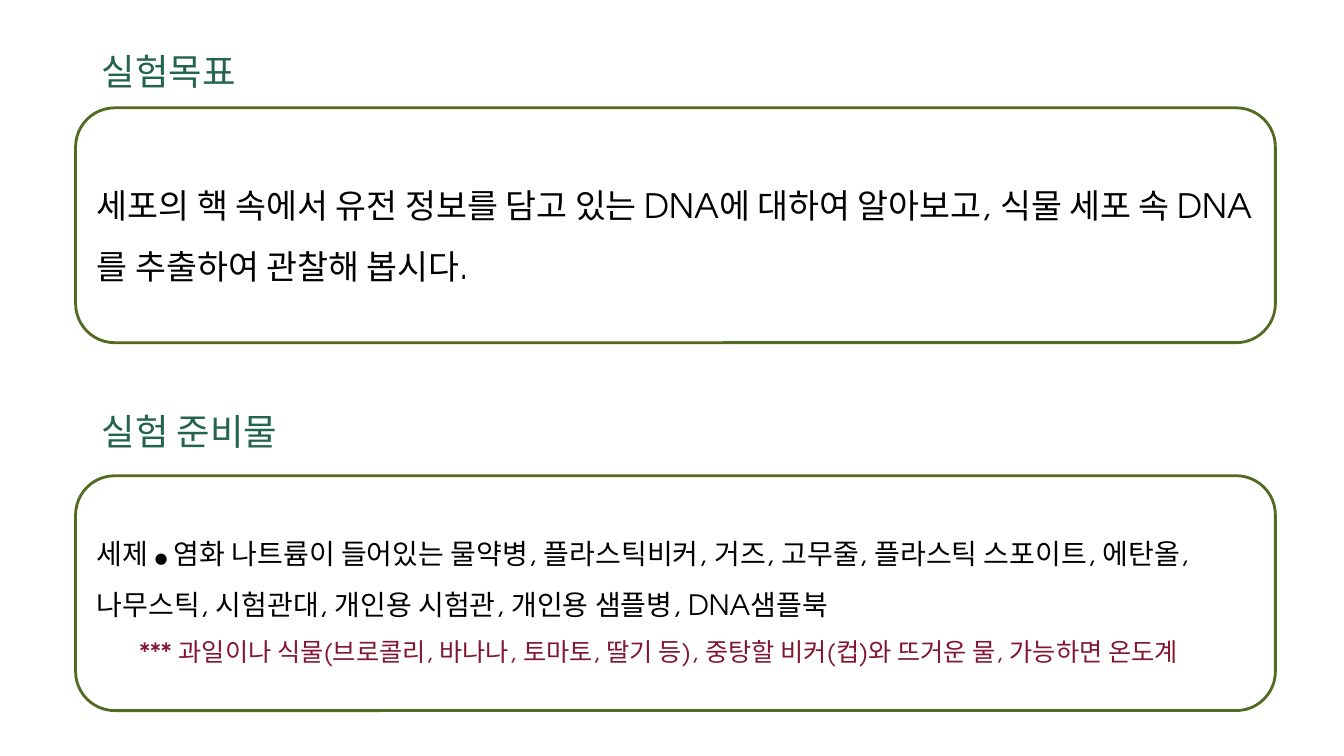
from lxml import etree
from pptx import Presentation, util as u
from pptx.enum import shapes, text

COLORS = {"heading": "22644D", "border": "536A21", "box": "FFFFFF",
          "body": "000000", "note": "811731", "shadow": "808080"}
FONT = "TeX Gyre Adventor"
DRAWING = "http://schemas.openxmlformats.org/drawingml/2006/main"
BOX_LEFT, BOX_WIDTH, BOX_HEIGHT = 0.75, 11.9, 2.33
HEADING_LEFT, HEADING_HEIGHT = 0.91, 0.48


def rgb(name):
    return RGBColor.from_string(COLORS[name])


def add_text(paragraph, words, size, color="body", spacing=1.0, indent=0, shadow=False):
    """Append a formatted run and set its paragraph's spacing and first-line indent."""
    paragraph.alignment = text.PP_ALIGN.LEFT
    paragraph.line_spacing = spacing
    if indent:
        paragraph._p.get_or_add_pPr().set("indent", str(u.Inches(indent)))
    run = paragraph.add_run()
    run.text = words
    run.font.size = u.Pt(size)
    run.font.name = FONT
    run.font.color.rgb = rgb(color)
    if shadow:
        effects = etree.fromstring(
            f'<a:effectLst xmlns:a="{DRAWING}">'
            '<a:outerShdw blurRad="38100" dist="38100" dir="2700000" algn="tl">'
            f'<a:srgbClr val="{COLORS["shadow"]}"><a:alpha val="50000"/></a:srgbClr>'
            '</a:outerShdw></a:effectLst>')
        run._r.rPr.find(f"{{{DRAWING}}}solidFill").addnext(effects)


from pptx.dml.color import RGBColor

presentation = Presentation()
presentation.slide_width, presentation.slide_height = u.Inches(13.33), u.Inches(7.5)
slide = presentation.slides.add_slide(presentation.slide_layouts[5])

# Each paragraph: first-line indent, then its runs as (words, size, color)
sections = [
    ("실험목표", 0.39, 1.96, 1.07, [
        (0, [("세포의 핵 속에서 유전 정보를 담고 있는 DNA에 대하여 알아보고, "
              "식물 세포 속 DNA를 추출하여 관찰해 봅시다.", 24, "body")]),
    ]),
    ("실험 준비물", 3.96, 2.3, 4.72, [
        (0, [("세제 ", 20, "body"),
             ("●", 9, "body"),
             (" 염화 나트륨이 들어있는 물약병, 플라스틱비커, 거즈, 고무줄, 플라스틱 스포이트, "
              "에탄올, 나무스틱, 시험관대, 개인용 시험관, 개인용 샘플병, DNA샘플북", 20, "body")]),
        (0.42, [("*** 과일이나 식물(브로콜리, 바나나, 토마토, 딸기 등), 중탕할 비커(컵)와 "
                 "뜨거운 물, 가능하면 온도계", 18, "note")]),
    ]),
]

for number, (title, heading_top, heading_width, box_top, paragraphs) in enumerate(sections):
    place = [u.Inches(length) for length in
             (HEADING_LEFT, heading_top, heading_width, HEADING_HEIGHT)]
    if number == 0:
        heading = slide.shapes.title
        heading.left, heading.top, heading.width, heading.height = place
    else:
        heading = slide.shapes.add_textbox(*place)
    frame = heading.text_frame
    frame.word_wrap = True
    frame.auto_size = text.MSO_AUTO_SIZE.NONE
    frame.vertical_anchor = text.MSO_ANCHOR.TOP
    frame.margin_left = frame.margin_right = u.Inches(0.1)
    frame.margin_top = frame.margin_bottom = u.Inches(0.1)
    add_text(frame.paragraphs[0], title, 26, "heading", shadow=True)

    box = slide.shapes.add_shape(
        shapes.MSO_SHAPE.ROUNDED_RECTANGLE, u.Inches(BOX_LEFT), u.Inches(box_top),
        u.Inches(BOX_WIDTH), u.Inches(BOX_HEIGHT))
    box.shadow.inherit = False
    box.fill.solid()
    box.fill.fore_color.rgb = rgb("box")
    box.line.color.rgb = rgb("border")
    box.line.width = u.Pt(2)
    frame = box.text_frame
    frame.word_wrap = True
    frame.vertical_anchor = text.MSO_ANCHOR.MIDDLE
    for position, (indent, runs) in enumerate(paragraphs):
        paragraph = frame.add_paragraph() if position else frame.paragraphs[0]
        for words, size, color in runs:
            add_text(paragraph, words, size, color, spacing=1.5, indent=indent)

presentation.save("out.pptx")
